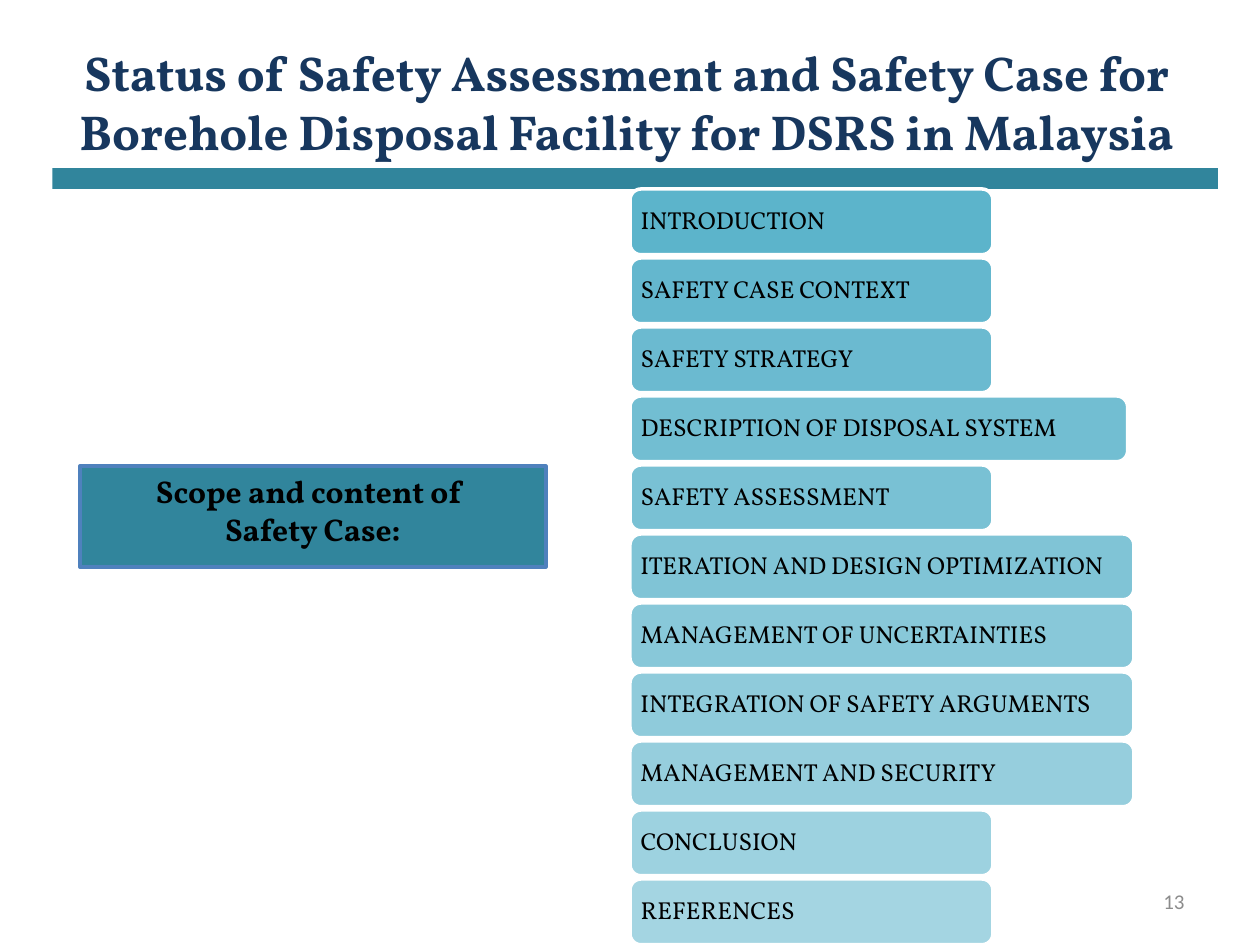
from dataclasses import dataclass

import pptx
import pptx.dml.color
import pptx.enum.shapes
import pptx.enum.text
import pptx.oxml
import pptx.oxml.ns
import pptx.util

Pt = pptx.util.Pt
ALIGN = pptx.enum.text.PP_ALIGN
ANCHOR = pptx.enum.text.MSO_ANCHOR
SHAPE = pptx.enum.shapes.MSO_SHAPE

COLORS = {
    "title": "17375E",
    "teal": "31859C",
    "outline": "4F81BD",
    "chapter": "4BACC6",
    "white": "FFFFFF",
    "text": "000000",
    "number": "8C8C8C",
}
SERIF = "Vollkorn"
SHORT, MEDIUM, LONG = 207.4, 284.4, 288
CHAPTER_LEFT, CHAPTER_TOP = 360, 108
CHAPTER_HEIGHT, CHAPTER_STEP = 37.6, 39.43


@dataclass
class Chapter:
    heading: str
    width: float


CHAPTERS = [
    Chapter("INTRODUCTION", SHORT),
    Chapter("SAFETY CASE CONTEXT", SHORT),
    Chapter("SAFETY STRATEGY", SHORT),
    Chapter("DESCRIPTION OF DISPOSAL SYSTEM", MEDIUM),
    Chapter("SAFETY ASSESSMENT", SHORT),
    Chapter("ITERATION AND DESIGN OPTIMIZATION", LONG),
    Chapter("MANAGEMENT OF UNCERTAINTIES", LONG),
    Chapter("INTEGRATION OF SAFETY ARGUMENTS", LONG),
    Chapter("MANAGEMENT AND SECURITY", LONG),
    Chapter("CONCLUSION", SHORT),
    Chapter("REFERENCES", SHORT),
]


def rgb(name: str) -> pptx.dml.color.RGBColor:
    return pptx.dml.color.RGBColor.from_string(COLORS[name])


def write(frame, lines: list[str], size: float, color: str, align, anchor,
          font: str = SERIF, bold: bool = False) -> None:
    """Fill a text frame with one paragraph per line."""
    frame.word_wrap = True
    frame.auto_size = pptx.enum.text.MSO_AUTO_SIZE.NONE
    frame.vertical_anchor = anchor
    frame.text = "\n".join(lines)
    for paragraph in frame.paragraphs:
        paragraph.alignment = align
        paragraph.font.name = font
        paragraph.font.size = Pt(size)
        paragraph.font.bold = bold
        paragraph.font.color.rgb = rgb(color)


def add_block(slide, kind, left: float, top: float, width: float, height: float,
              fill: str, line: str | None = None):
    """Add a filled shape, with a 2 pt outline where a line colour is given."""
    block = slide.shapes.add_shape(kind, Pt(left), Pt(top), Pt(width), Pt(height))
    block.shadow.inherit = False
    block.fill.solid()
    block.fill.fore_color.rgb = rgb(fill)
    if line:
        block.line.color.rgb = rgb(line)
        block.line.width = Pt(2)
    else:
        block.line.fill.background()
    return block


def set_opacity(block, percent: int) -> None:
    color = block.fill._xPr.find(pptx.oxml.ns.qn("a:solidFill"))[0]
    alpha = pptx.oxml.parse_xml(
        f'<a:alpha {pptx.oxml.ns.nsdecls("a")} val="{percent * 1000}"/>')
    color.append(alpha)


def add_chapter(slide, chapter: Chapter, index: int) -> None:
    """Each chapter sits one step lower and is 4 % paler than the one before."""
    bar = add_block(slide, SHAPE.ROUNDED_RECTANGLE, CHAPTER_LEFT,
                    CHAPTER_TOP + index * CHAPTER_STEP, chapter.width,
                    CHAPTER_HEIGHT, "chapter", "white")
    set_opacity(bar, 90 - 4 * index)
    frame = bar.text_frame
    frame.margin_left = frame.margin_right = Pt(4.2)
    frame.margin_top = frame.margin_bottom = Pt(2)
    write(frame, [chapter.heading], 14, "text", ALIGN.JUSTIFY, ANCHOR.MIDDLE)
    frame.paragraphs[0].line_spacing = 0.9


def main() -> None:
    deck = pptx.Presentation()
    deck.slide_width, deck.slide_height = Pt(720), Pt(540)
    slide = deck.slides.add_slide(deck.slide_layouts[5])

    # Title
    title = slide.shapes.title
    title.left, title.top, title.width, title.height = Pt(20), Pt(24), Pt(676), Pt(67.5)
    write(title.text_frame,
          ["Status of Safety Assessment and Safety Case for "
           "Borehole Disposal Facility for DSRS in Malaysia"],
          28, "title", ALIGN.CENTER, ANCHOR.MIDDLE, bold=True)

    # Slide number
    number = slide.shapes.add_textbox(Pt(516), Pt(500.5), Pt(168), Pt(28.75))
    write(number.text_frame, ["13"], 12, "number", ALIGN.RIGHT, ANCHOR.MIDDLE, "Calibri")

    # Scope label and rule under the title
    scope = add_block(slide, SHAPE.RECTANGLE, 45.6, 266.4, 266.4, 57.6, "teal", "outline")
    write(scope.text_frame, ["Scope and content of ", "Safety Case:"],
          18, "text", ALIGN.CENTER, ANCHOR.TOP, bold=True)
    add_block(slide, SHAPE.RECTANGLE, 30, 96, 666, 12, "teal")

    # Chapters of the safety case
    for index, chapter in enumerate(CHAPTERS):
        add_chapter(slide, chapter, index)

    deck.save("out.pptx")


if __name__ == "__main__":
    main()
